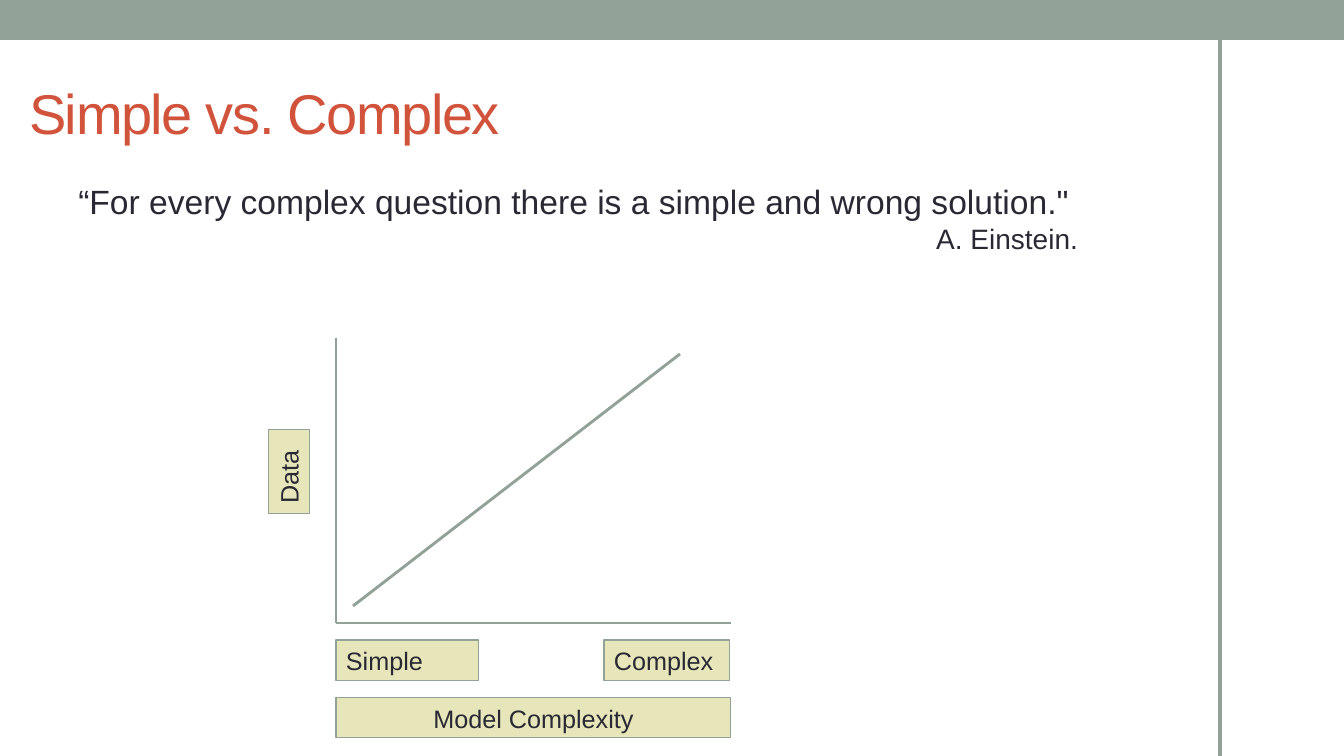
from lxml.etree import SubElement
from pptx import Presentation
from pptx.dml.color import RGBColor
from pptx.enum.shapes import MSO_CONNECTOR, MSO_SHAPE
from pptx.enum.text import MSO_ANCHOR, PP_ALIGN
from pptx.oxml.ns import qn
from pptx.util import Pt

SCALE = 914400 / 100.8
WIDTH, HEIGHT = 1344, 756
FONT = "Arial"
SAGE, CREAM, INK, RED = "93A299", "E7E5BA", "292934", "D2533C"

TITLE = "Simple vs. Complex"
QUOTE = "“For every complex question there is a simple and wrong solution.\" "
AUTHOR = "A. Einstein."

TITLE_BOX = (19, 58, 1069, 109)
QUOTE_BOX = (19, 176, 1069, 537)
TOP_BAR = (0, 0, WIDTH, 40)
LINES = [
    ((1220, 38), (1220, HEIGHT), 3.25),
    ((336, 338), (336, 623), 2.08),
    ((731, 623), (336, 623), 2.08),
    ((353, 606), (680, 354), 2.08),
]
LABELS = [
    ("Data", (247, 451, 84, 41), 270, PP_ALIGN.LEFT),
    ("Simple", (336, 640, 143, 41), 0, PP_ALIGN.LEFT),
    ("Complex", (604, 640, 126, 41), 0, PP_ALIGN.LEFT),
    ("Model Complexity", (336, 698, 395, 40), 0, PP_ALIGN.CENTER),
]


def px(value):
    return round(value * SCALE)


def color(value):
    return RGBColor.from_string(value)


def add_run(paragraph, text, size, ink=INK):
    run = paragraph.add_run()
    run.text = text
    run.font.name = FONT
    run.font.size = Pt(size)
    run.font.color.rgb = color(ink)
    return run


def add_box(slide, box, fill):
    shape = slide.shapes.add_shape(MSO_SHAPE.RECTANGLE, *map(px, box))
    shape.shadow.inherit = False
    shape.fill.solid()
    shape.fill.fore_color.rgb = color(fill)
    return shape


def add_line(slide, start, end, width):
    connector = slide.shapes.add_connector(
        MSO_CONNECTOR.STRAIGHT, *map(px, start + end))
    connector.line.color.rgb = color(SAGE)
    connector.line.width = Pt(width)
    SubElement(connector._element.spPr, qn("a:effectLst"))


def add_label(slide, text, box, rotation, alignment):
    shape = add_box(slide, box, CREAM)
    shape.line.color.rgb = color(SAGE)
    shape.line.width = Pt(0.75)
    shape.rotation = rotation
    frame = shape.text_frame
    frame.word_wrap = True
    frame.vertical_anchor = MSO_ANCHOR.TOP
    paragraph = frame.paragraphs[0]
    paragraph.alignment = alignment
    add_run(paragraph, text, 18)


def add_title(slide):
    title = slide.shapes.title
    title.left, title.top, title.width, title.height = map(px, TITLE_BOX)
    frame = title.text_frame
    frame.vertical_anchor = MSO_ANCHOR.MIDDLE
    paragraph = frame.paragraphs[0]
    paragraph.alignment = PP_ALIGN.LEFT
    run = add_run(paragraph, TITLE, 40, RED)
    run.font._element.set("spc", "-100")


def add_quote(slide):
    frame = slide.shapes.add_textbox(*map(px, QUOTE_BOX)).text_frame
    frame.word_wrap = True
    paragraph = frame.paragraphs[0]
    paragraph.alignment = PP_ALIGN.RIGHT
    add_run(paragraph, QUOTE, 24)
    paragraph.add_line_break()
    add_run(paragraph, AUTHOR, 20)


def main():
    presentation = Presentation()
    presentation.slide_width, presentation.slide_height = px(WIDTH), px(HEIGHT)
    slide = presentation.slides.add_slide(presentation.slide_layouts[5])
    add_box(slide, TOP_BAR, SAGE).line.fill.background()
    add_title(slide)
    add_quote(slide)
    for line in LINES:
        add_line(slide, *line)
    for label in LABELS:
        add_label(slide, *label)
    presentation.save("out.pptx")


if __name__ == "__main__":
    main()
